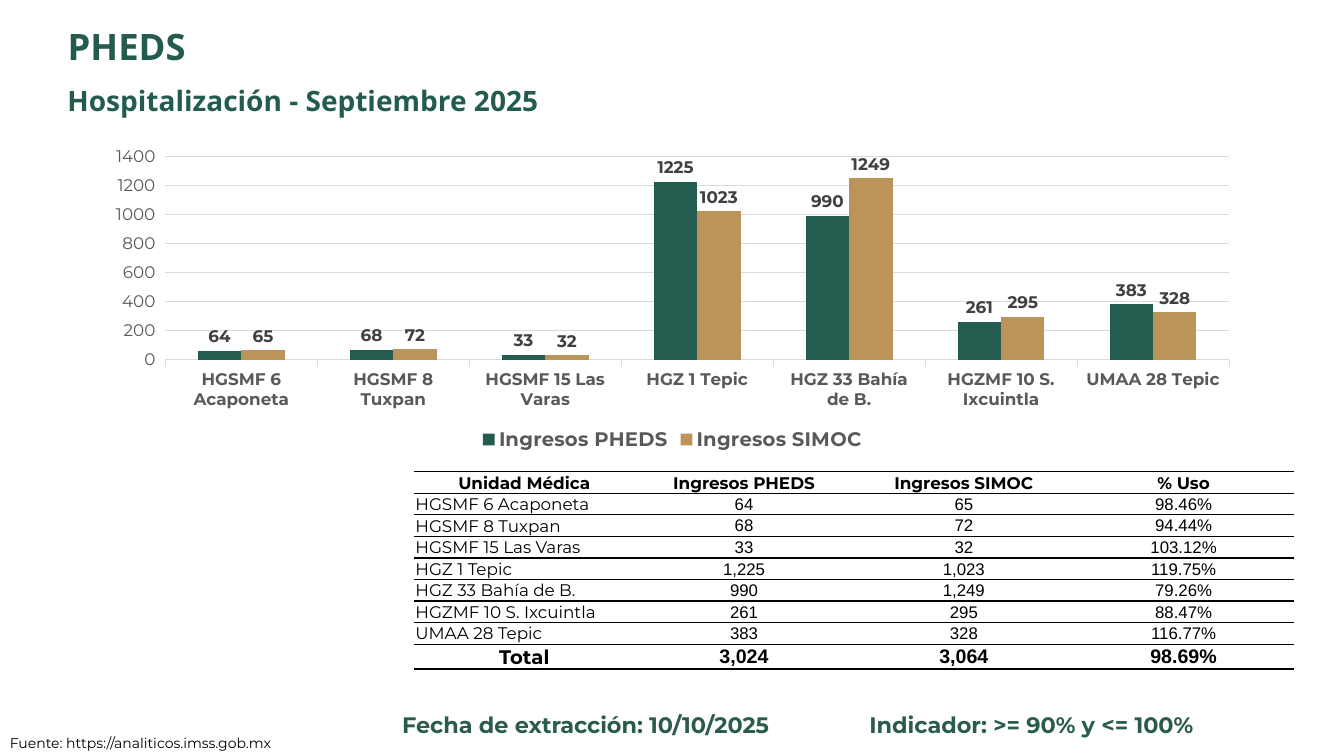
from dataclasses import dataclass

from lxml import etree
from pptx import Presentation
from pptx import util as u
from pptx.chart import data as chart_data
from pptx.dml.color import RGBColor
from pptx.enum import chart as chart_enum
from pptx.enum import text
from pptx.oxml import ns

COLORS = {
    "title": "235C4F",
    "footer": "2A5C4B",
    "pheds": "245C4F",
    "simoc": "BC945A",
    "black": "000000",
    "axis": "595959",
    "label": "404040",
    "grid": "D9D9D9",
}
LEFT, CENTER = text.PP_ALIGN.LEFT, text.PP_ALIGN.CENTER


@dataclass(frozen=True)
class Unit:
    name: str
    pheds: int
    simoc: int

    def cells(self) -> list[str]:
        return [self.name, f"{self.pheds:,}", f"{self.simoc:,}", f"{self.pheds / self.simoc:.2%}"]


@dataclass(frozen=True)
class Label:
    words: str
    left: float
    top: float
    width: float
    height: float
    size: float
    font: str = "Montserrat"
    color: str = "footer"
    bold: bool = True
    align: text.PP_ALIGN = CENTER
    line_spacing: float = 1.0
    wrap: bool = True


UNITS = [
    Unit("HGSMF 6 Acaponeta", 64, 65),
    Unit("HGSMF 8 Tuxpan", 68, 72),
    Unit("HGSMF 15 Las Varas", 33, 32),
    Unit("HGZ 1 Tepic", 1225, 1023),
    Unit("HGZ 33 Bahía de B.", 990, 1249),
    Unit("HGZMF 10 S. Ixcuintla", 261, 295),
    Unit("UMAA 28 Tepic", 383, 328),
]
TOTAL = Unit("Total", sum(unit.pheds for unit in UNITS), sum(unit.simoc for unit in UNITS))
SERIES = {"Ingresos PHEDS": "pheds", "Ingresos SIMOC": "simoc"}
HEADER = ["Unidad Médica", *SERIES, "% Uso"]

TITLE = Label("PHEDS", 0.57, 0.24, 9.48, 0.49, 26, "Noto Sans", "title", True, LEFT, 0.9)
LABELS = [
    Label("Hospitalización - Septiembre 2025", 0.57, 0.82, 9.48, 0.49, 20,
          "Noto Sans", "title", True, LEFT, 0.9),
    Label("Fuente: https://analiticos.imss.gob.mx", 0, 7.24, 2.92, 0.27, 10,
          color="black", bold=False, align=LEFT, wrap=False),
    Label("Fecha de extracción: 10/10/2025", 3.29, 7.01, 5.04, 0.37, 16),
    Label("Indicador: >= 90% y <= 100%", 7.34, 7.01, 5.78, 0.37, 16),
]


def rgb(color: str) -> RGBColor:
    return RGBColor.from_string(COLORS[color])


def style_font(font, size: float, color: str, bold: bool = False, name: str = "Montserrat") -> None:
    font.size = u.Pt(size)
    font.bold = bold
    font.name = name
    font.color.rgb = rgb(color)


def fill_label(shape, label: Label) -> None:
    shape.left, shape.top = u.Inches(label.left), u.Inches(label.top)
    shape.width, shape.height = u.Inches(label.width), u.Inches(label.height)
    frame = shape.text_frame
    frame.text = label.words
    frame.word_wrap = label.wrap
    frame.auto_size = text.MSO_AUTO_SIZE.NONE
    frame.vertical_anchor = text.MSO_ANCHOR.TOP
    paragraph = frame.paragraphs[0]
    paragraph.alignment = label.align
    paragraph.line_spacing = label.line_spacing
    style_font(paragraph.runs[0].font, label.size, label.color, label.bold, label.font)


def add_label(slide, label: Label) -> None:
    fill_label(slide.shapes.add_textbox(0, 0, 0, 0), label)


def set_borders(cell) -> None:
    """Rule the cell above and below, with open sides."""
    properties = cell._tc.get_or_add_tcPr()
    for side in "LRTB":
        line = etree.SubElement(properties, ns.qn(f"a:ln{side}"), w=str(u.Pt(1)))
        if side in "LR":
            etree.SubElement(line, ns.qn("a:noFill"))
        else:
            fill = etree.SubElement(line, ns.qn("a:solidFill"))
            etree.SubElement(fill, ns.qn("a:srgbClr"), val=COLORS["black"])


def add_units_table(slide) -> None:
    rows = [HEADER, *(unit.cells() for unit in UNITS), TOTAL.cells()]
    last = len(rows) - 1
    table = slide.shapes.add_table(
        len(rows), len(HEADER), u.Inches(4.11), u.Inches(4.68), u.Inches(8.72), u.Inches(1.93)
    ).table
    table.first_row = table.horz_banding = False
    for r, row in enumerate(rows):
        table.rows[r].height = u.Inches(0.16 if r == last else 0.21)
        for c, words in enumerate(row):
            cell = table.cell(r, c)
            is_name = c == 0 and 0 < r < last
            cell.margin_left = cell.margin_right = cell.margin_top = u.Inches(0.01)
            cell.margin_bottom = 0
            cell.vertical_anchor = text.MSO_ANCHOR.TOP if is_name else text.MSO_ANCHOR.MIDDLE
            set_borders(cell)
            cell.fill.background()
            cell.text_frame.text = words
            paragraph = cell.text_frame.paragraphs[0]
            paragraph.alignment = LEFT if is_name else CENTER
            font_name = "Montserrat" if r == 0 or c == 0 else "Arial"
            style_font(paragraph.runs[0].font, 14 if r == last else 12, "black",
                       r in (0, last), font_name)


def add_admissions_chart(slide) -> None:
    data = chart_data.CategoryChartData()
    data.categories = [unit.name for unit in UNITS]
    for name, field in SERIES.items():
        data.add_series(name, [getattr(unit, field) for unit in UNITS])
    chart = slide.shapes.add_chart(
        chart_enum.XL_CHART_TYPE.COLUMN_CLUSTERED,
        u.Inches(0.92), u.Inches(1.39), u.Inches(11.5), u.Inches(3.13), data,
    ).chart
    style_font(chart.font, 10, "black")
    chart.has_title = False
    chart.has_legend = True
    chart.legend.position = chart_enum.XL_LEGEND_POSITION.BOTTOM
    chart.legend.include_in_layout = False
    style_font(chart.legend.font, 14, "axis", True)

    category_axis, value_axis = chart.category_axis, chart.value_axis
    style_font(category_axis.tick_labels.font, 12, "axis", True)
    style_font(value_axis.tick_labels.font, 12, "axis")
    value_axis.minimum_scale, value_axis.maximum_scale, value_axis.major_unit = 0, 1400, 200
    value_axis.format.line.fill.background()
    for line in (category_axis.format.line, value_axis.major_gridlines.format.line):
        line.color.rgb = rgb("grid")
        line.width = u.Pt(0.75)

    plot = chart.plots[0]
    plot.gap_width = 150
    plot.overlap = 0
    plot.vary_by_categories = False
    for series, color in zip(plot.series, SERIES.values()):
        series.format.fill.solid()
        series.format.fill.fore_color.rgb = rgb(color)
        labels = series.data_labels
        labels.show_value = True
        labels.position = chart_enum.XL_LABEL_POSITION.OUTSIDE_END
        style_font(labels.font, 12, "label", True)


def main() -> None:
    presentation = Presentation()
    presentation.slide_width, presentation.slide_height = u.Inches(13.33), u.Inches(7.5)
    slide = presentation.slides.add_slide(presentation.slide_layouts.get_by_name("Title Only"))
    fill_label(slide.shapes.title, TITLE)
    add_units_table(slide)
    add_admissions_chart(slide)
    for label in LABELS:
        add_label(slide, label)
    presentation.save("out.pptx")


if __name__ == "__main__":
    main()
